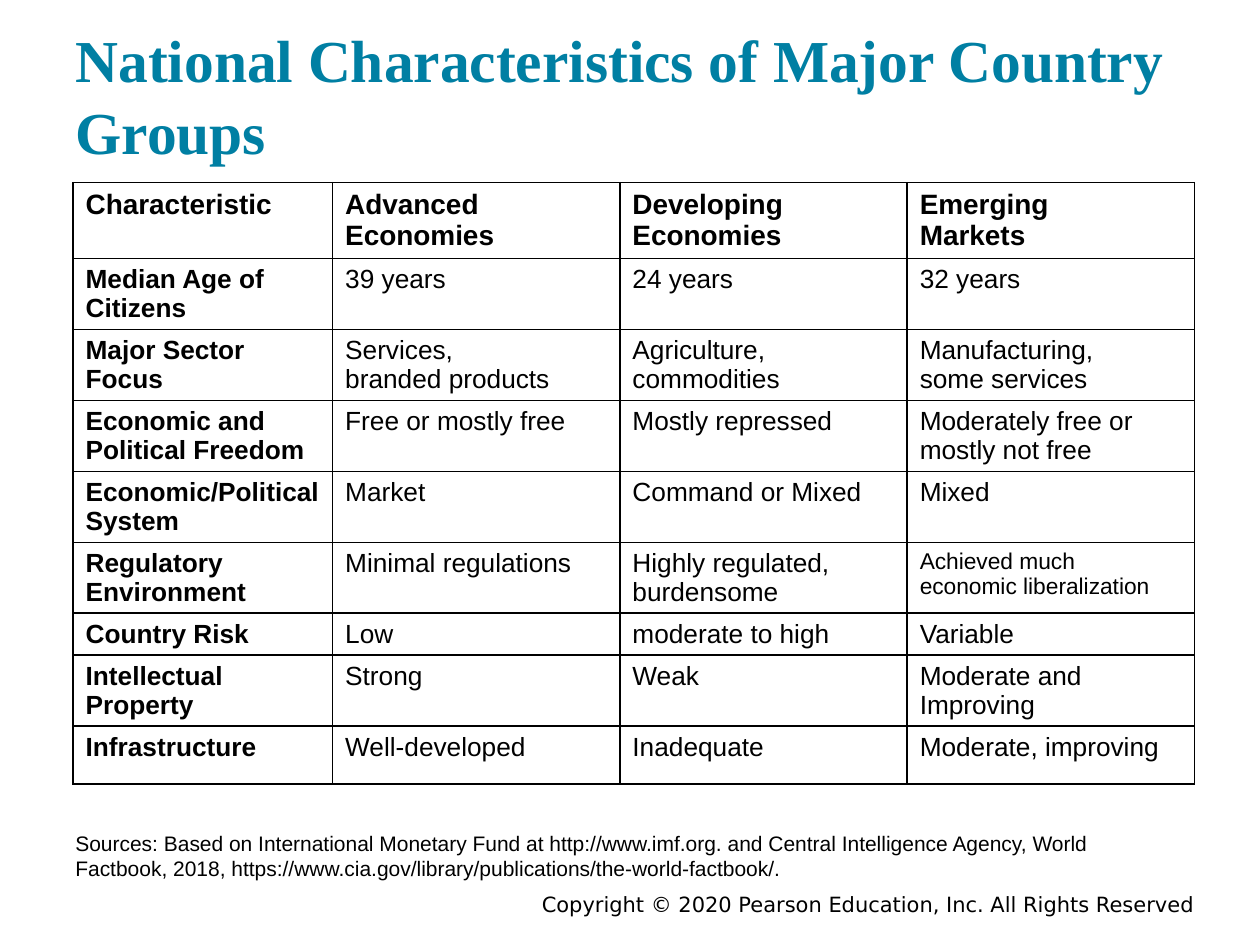
from lxml.etree import SubElement
from pptx import Presentation
from pptx.dml.color import RGBColor
from pptx.enum.text import MSO_ANCHOR as Anchor, MSO_AUTO_SIZE as AutoSize, PP_ALIGN as Align
from pptx.oxml.ns import qn
from pptx.util import Inches, Pt

TITLE = "National Characteristics of Major Country Groups"
HEADER = ("Characteristic", "Advanced\nEconomies", "Developing\nEconomies", "Emerging\nMarkets")
CHARACTERISTICS = [
    ("Median Age of Citizens", "39 years", "24 years", "32 years"),
    ("Major Sector Focus", "Services,\nbranded products", "Agriculture,\ncommodities",
     "Manufacturing,\nsome services"),
    ("Economic and Political Freedom", "Free or mostly free", "Mostly repressed",
     "Moderately free or\nmostly not free"),
    ("Economic/Political\nSystem", "Market", "Command or Mixed", "Mixed"),
    ("Regulatory Environment", "Minimal regulations", "Highly regulated,\nburdensome",
     "Achieved much\neconomic liberalization"),
    ("Country Risk", "Low", "moderate to high", "Variable"),
    ("Intellectual Property", "Strong", "Weak", "Moderate and\nImproving"),
    ("Infrastructure", "Well-developed", "Inadequate", "Moderate, improving"),
]
SOURCES = (
    "Sources: Based on International Monetary Fund at http://www.imf.org. and Central "
    "Intelligence Agency, World Factbook, 2018, "
    "https://www.cia.gov/library/publications/the-world-factbook/."
)
COPYRIGHT = "Copyright © 2020 Pearson Education, Inc. All Rights Reserved"

COLORS = {"title": "007FA3", "text": "000000", "border": "000000"}
COLUMN_WIDTHS = [2.06] + [2.28] * 3
ROW_HEIGHTS = [0.6] + [0.56] * 5 + [0.33, 0.56, 0.46]
SMALL_CELL = (5, 3)


def style_text(frame, size, family="Arial", color="text", bold=False, align=Align.LEFT):
    for paragraph in frame.paragraphs:
        paragraph.alignment = align
        font = paragraph.font
        font.size, font.name, font.bold = Pt(size), family, bold
        font.color.rgb = RGBColor.from_string(COLORS[color])


def place(box, left, top, width, height):
    box.left, box.top = Inches(left), Inches(top)
    box.width, box.height = Inches(width), Inches(height)


def set_frame(frame, text, inset, anchor):
    frame.text = text
    frame.word_wrap = True
    frame.auto_size = AutoSize.NONE
    frame.vertical_anchor = anchor
    frame.margin_left = frame.margin_right = Inches(0.1)
    frame.margin_top = frame.margin_bottom = Inches(inset)


def add_borders(cell):
    properties = cell._tc.get_or_add_tcPr()
    for position, side in enumerate(("lnL", "lnR", "lnT", "lnB")):
        line = properties.makeelement(qn(f"a:{side}"), {"w": str(Pt(1))})
        fill = SubElement(line, qn("a:solidFill"))
        SubElement(fill, qn("a:srgbClr"), val=COLORS["border"])
        properties.insert(position, line)


def add_comparison(slide):
    rows = [HEADER] + CHARACTERISTICS
    frame = slide.shapes.add_table(
        len(rows), len(HEADER), Inches(0.58), Inches(1.45),
        Inches(sum(COLUMN_WIDTHS)), Inches(sum(ROW_HEIGHTS)))
    table = frame.table
    table.horz_banding = False
    for column, width in zip(table.columns, COLUMN_WIDTHS):
        column.width = Inches(width)
    for r, (entries, height) in enumerate(zip(rows, ROW_HEIGHTS)):
        table.rows[r].height = Inches(height)
        for c, entry in enumerate(entries):
            cell = table.cell(r, c)
            cell.text = entry
            cell.fill.background()
            size = 16 if r == 0 else 13 if (r, c) == SMALL_CELL else 15
            style_text(cell.text_frame, size, bold=r == 0 or c == 0)
            add_borders(cell)


def main():
    """Build the country group comparison slide."""
    deck = Presentation()
    deck.slide_width, deck.slide_height = Inches(10), Inches(7.5)
    slide = deck.slides.add_slide(deck.slide_layouts[5])

    title = slide.shapes.title
    place(title, 0.5, 0.25, 9, 1.17)
    set_frame(title.text_frame, TITLE, 0.1, Anchor.BOTTOM)
    style_text(title.text_frame, 34, "Times New Roman", "title", bold=True)

    add_comparison(slide)

    sources = slide.shapes.add_textbox(Inches(0.5), Inches(6.53), Inches(9), Inches(0.56))
    set_frame(sources.text_frame, SOURCES, 0.1, Anchor.BOTTOM)
    style_text(sources.text_frame, 12)

    notice = slide.shapes.add_textbox(Inches(1.75), Inches(7.03), Inches(7.83), Inches(0.22))
    set_frame(notice.text_frame, COPYRIGHT, 0.05, Anchor.TOP)
    style_text(notice.text_frame, 12, "DejaVu Sans", align=Align.RIGHT)

    deck.save("out.pptx")


if __name__ == "__main__":
    main()
